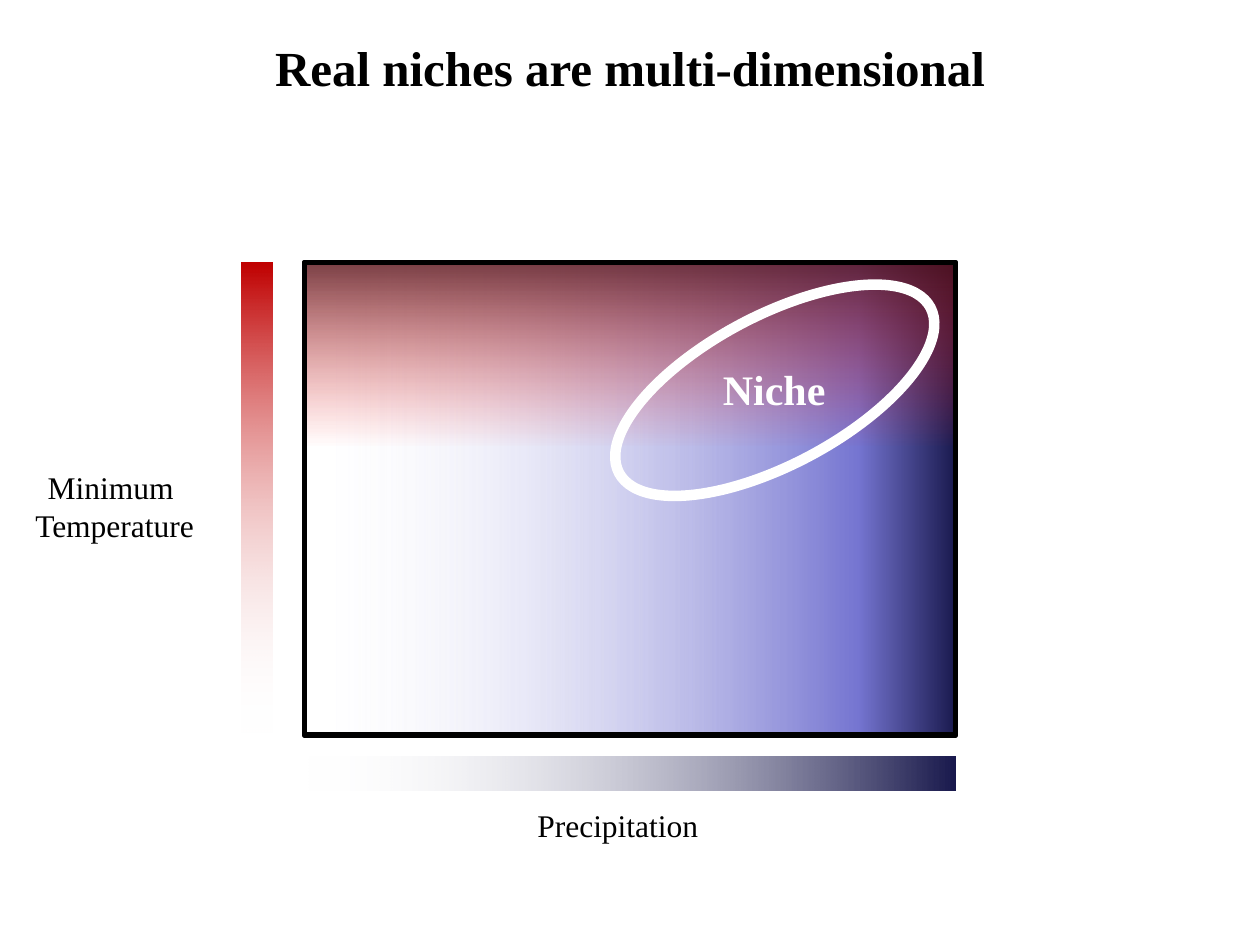
from lxml import etree
from pptx import Presentation
from pptx.dml.color import RGBColor
from pptx.enum import shapes, text
from pptx.oxml import ns
from pptx.util import Pt

FONT = "Times New Roman"
HUES = {"white": "FFFFFF", "black": "000000", "blue": "7575D1", "navy": "19194D",
        "red": "FF2F2F", "wine": "580E15", "crimson": "C00000"}

TITLE = "Real niches are multi-dimensional"
# text, box, size, bold, colour, alignment
LABELS = [
    ("Precipitation", (300, 457, 107, 29), 18, False, "black", "LEFT"),
    ("Minimum \nTemperature", (12.5, 264, 106, 51), 18, False, "black", "CENTER"),
    ("Niche", (406, 204, 73.5, 36.5), 24, True, "white", "LEFT"),
]

# stops: position %, colour, opacity %
CLEAR = (0, "white", 0)
RAIN = [CLEAR, (85, "blue", 100), (100, "navy", 100)]
HEAT = [CLEAR, (61, "red", 0), (100, "wine", 79)]
RAIN_KEY = [CLEAR, (100, "navy", 100)]
HEAT_KEY = [CLEAR, (100, "crimson", 100)]

PLOT = left, top, width, height = 174, 150, 372, 270
THICK = 19.5
AXIS_Y = 442
UP = 270


def rgb(name):
    return RGBColor.from_string(HUES[name])


def blend(shape, stops, angle):
    """Fill a shape with a linear gradient that may be partly clear."""
    shape.fill.background()
    props = shape.element.spPr
    grad = etree.Element(ns.qn("a:gradFill"), rotWithShape="1")
    items = etree.SubElement(grad, ns.qn("a:gsLst"))
    for spot, hue, alpha in stops:
        stop = etree.SubElement(items, ns.qn("a:gs"), pos=str(spot * 1000))
        tint = etree.SubElement(stop, ns.qn("a:srgbClr"), val=HUES[hue])
        if alpha < 100:
            etree.SubElement(tint, ns.qn("a:alpha"), val=str(alpha * 1000))
    etree.SubElement(grad, ns.qn("a:lin"), ang=str(angle * 60000), scaled="0")
    props.replace(props.find(ns.qn("a:noFill")), grad)


def draw(slide, kind, box, stops=None, angle=0, line=None, weight=0, turn=0):
    shape = slide.shapes.add_shape(kind, *map(Pt, box))
    shape.shadow.inherit = False
    shape.rotation = turn
    if stops:
        blend(shape, stops, angle)
    else:
        shape.fill.background()
    if line:
        shape.line.color.rgb = rgb(line)
        shape.line.width = Pt(weight)
    else:
        shape.line.fill.background()


def style(frame, size, bold, hue, align):
    frame.auto_size = text.MSO_AUTO_SIZE.SHAPE_TO_FIT_TEXT
    frame.vertical_anchor = text.MSO_ANCHOR.TOP
    for para in frame.paragraphs:
        para.alignment = text.PP_ALIGN[align]
        for run in para.runs:
            font = run.font
            font.name, font.size, font.bold = FONT, Pt(size), bold
            font.color.rgb = rgb(hue)


def label(slide, words, box, *look):
    frame = slide.shapes.add_textbox(*map(Pt, box)).text_frame
    frame.text = words
    frame.word_wrap = False
    style(frame, *look)


def main():
    deck = Presentation()
    deck.slide_width, deck.slide_height = Pt(720), Pt(540)
    slide = deck.slides.add_slide(deck.slide_layouts[5])
    rect, oval = shapes.MSO_SHAPE.RECTANGLE, shapes.MSO_SHAPE.OVAL

    head = slide.shapes.title
    head.left, head.top, head.width, head.height = map(Pt, (0, 18, 720, 41))
    head.text_frame.text = TITLE
    style(head.text_frame, 28, True, "black", "CENTER")

    draw(slide, rect, PLOT, RAIN, 0, "black", 3)
    for item in LABELS[:2]:
        label(slide, *item)
    draw(slide, rect, PLOT, HEAT, UP, "black", 3)
    draw(slide, oval, (342, 180.5, 201.5, 85), line="white", weight=6, turn=332)
    label(slide, *LABELS[2])

    draw(slide, rect, (138, top, 18, height), HEAT_KEY, UP)
    # An upright bar, turned to lie along the foot of the plot
    bar = (left + (width - THICK) / 2, AXIS_Y - width / 2, THICK, width)
    draw(slide, rect, bar, RAIN_KEY, UP, turn=90)

    deck.save("out.pptx")


if __name__ == "__main__":
    main()
